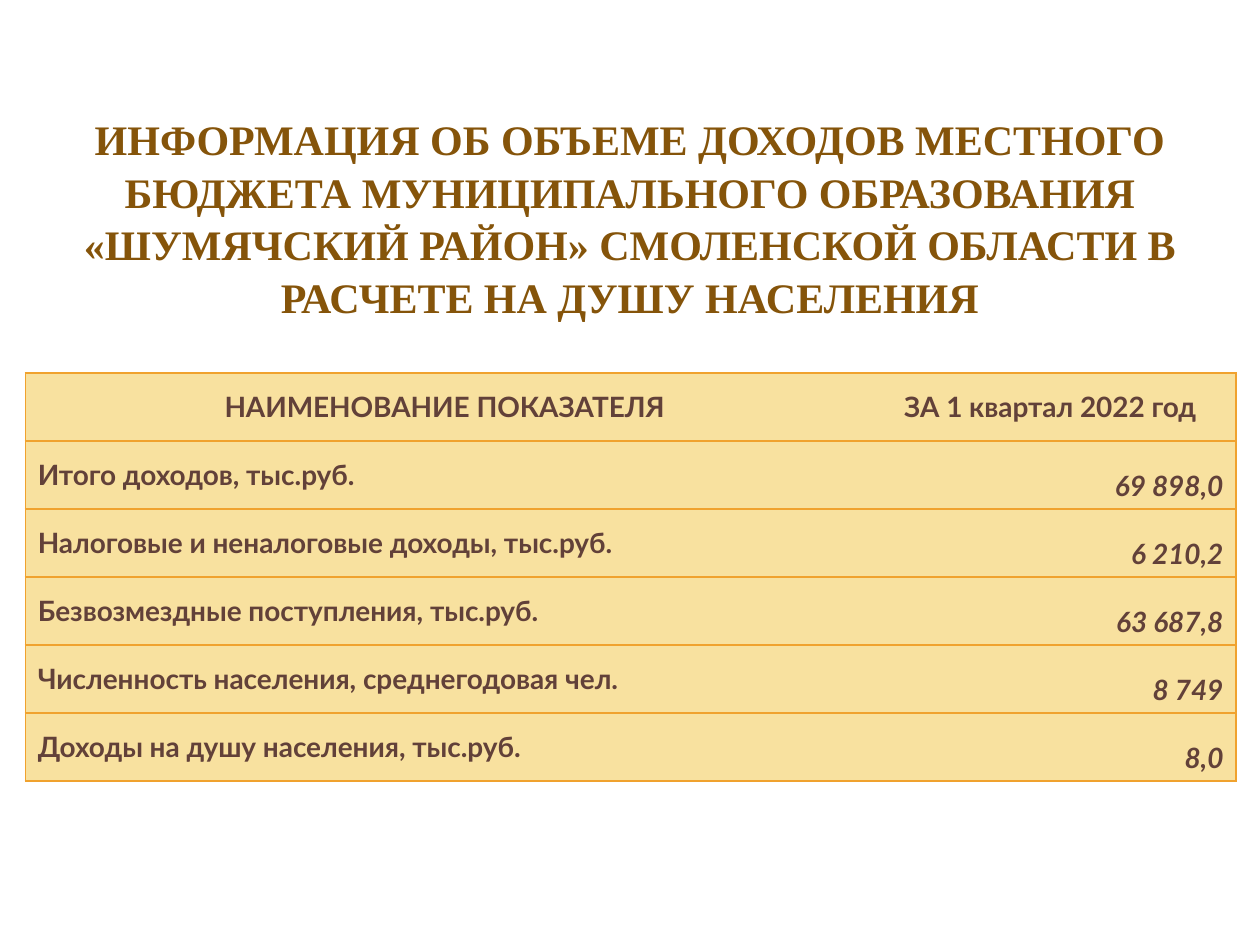
from lxml import etree
from pptx import Presentation
from pptx.dml.color import RGBColor
from pptx.enum.text import MSO_ANCHOR, PP_ALIGN
from pptx.oxml.ns import qn
from pptx.util import Inches, Pt

MIDDLE, BOTTOM = MSO_ANCHOR.MIDDLE, MSO_ANCHOR.BOTTOM
LEFT, CENTER, RIGHT = PP_ALIGN.LEFT, PP_ALIGN.CENTER, PP_ALIGN.RIGHT
BROWN = RGBColor(0x85, 0x54, 0x0A)
TEXT = RGBColor(0x62, 0x41, 0x39)
CREAM = RGBColor(0xF8, 0xE1, 0x9F)
ORANGE = RGBColor(0xF0, 0xA2, 0x2E)

TITLE = (
    "ИНФОРМАЦИЯ ОБ ОБЪЕМЕ ДОХОДОВ МЕСТНОГО БЮДЖЕТА МУНИЦИПАЛЬНОГО "
    "ОБРАЗОВАНИЯ «ШУМЯЧСКИЙ РАЙОН» СМОЛЕНСКОЙ ОБЛАСТИ В РАСЧЕТЕ НА ДУШУ НАСЕЛЕНИЯ"
)
ROWS = [
    ("НАИМЕНОВАНИЕ ПОКАЗАТЕЛЯ", "ЗА 1 квартал 2022 год"),
    ("Итого доходов, тыс.руб.", "69 898,0"),
    ("Налоговые и неналоговые доходы, тыс.руб.", "6 210,2"),
    ("Безвозмездные поступления, тыс.руб.", "63 687,8"),
    ("Численность населения, среднегодовая чел.", "8 749"),
    ("Доходы на душу населения, тыс.руб.", "8,0"),
]
COLUMN_WIDTHS = [6.66, 2.95]
ROW_HEIGHT = 0.54


def format_run(run, font_name, size, color):
    run.font.name = font_name
    run.font.size = Pt(size)
    run.font.bold = True
    run.font.color.rgb = color


def set_borders(cell, hidden_side):
    properties = cell._tc.get_or_add_tcPr()
    for side in ("lnL", "lnR", "lnT", "lnB"):
        line = etree.SubElement(properties, qn(f"a:{side}"), w=str(Pt(0.79)))
        if side == hidden_side:
            etree.SubElement(line, qn("a:noFill"))
        else:
            fill = etree.SubElement(line, qn("a:solidFill"))
            etree.SubElement(fill, qn("a:srgbClr"), val=str(ORANGE))


prs = Presentation()
prs.slide_width, prs.slide_height = Inches(10), Inches(7.5)
slide = prs.slides.add_slide(prs.slide_layouts[5])

title = slide.shapes.title
title.left, title.top = Inches(0), Inches(0.91)
title.width, title.height = Inches(10), Inches(1.62)
title.text_frame.text = TITLE
title.text_frame.word_wrap = True
title.text_frame.vertical_anchor = MIDDLE
heading = title.text_frame.paragraphs[0]
heading.alignment = CENTER
heading.line_spacing = 1.04
format_run(heading.runs[0], "Times New Roman", 24, BROWN)

income = slide.shapes.add_table(
    len(ROWS), len(COLUMN_WIDTHS), Inches(0.2), Inches(2.96),
    Inches(sum(COLUMN_WIDTHS)), Inches(ROW_HEIGHT * len(ROWS)),
).table
for column, width in zip(income.columns, COLUMN_WIDTHS):
    column.width = Inches(width)

for r, values in enumerate(ROWS):
    income.rows[r].height = Inches(ROW_HEIGHT)
    for c, value in enumerate(values):
        is_amount = r > 0 and c == 1
        cell = income.cell(r, c)
        set_borders(cell, "lnL" if c else "lnR")
        cell.fill.solid()
        cell.fill.fore_color.rgb = CREAM
        cell.vertical_anchor = BOTTOM if is_amount else MIDDLE
        cell.text_frame.text = value
        paragraph = cell.text_frame.paragraphs[0]
        paragraph.alignment = CENTER if r == 0 else (LEFT, RIGHT)[c]
        format_run(paragraph.runs[0], "Lato", 16, TEXT)
        paragraph.runs[0].font.italic = is_amount

prs.save("out.pptx")
